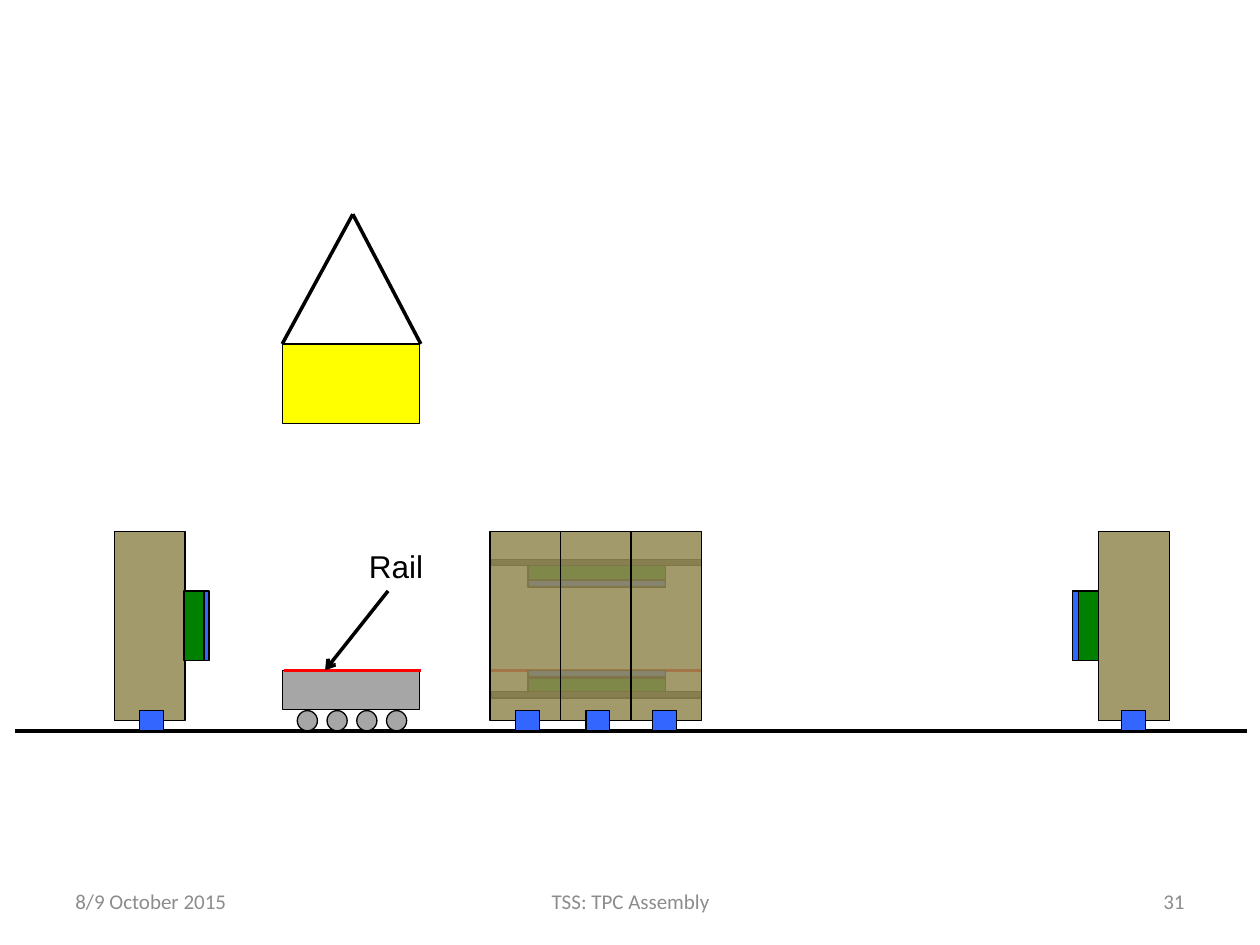
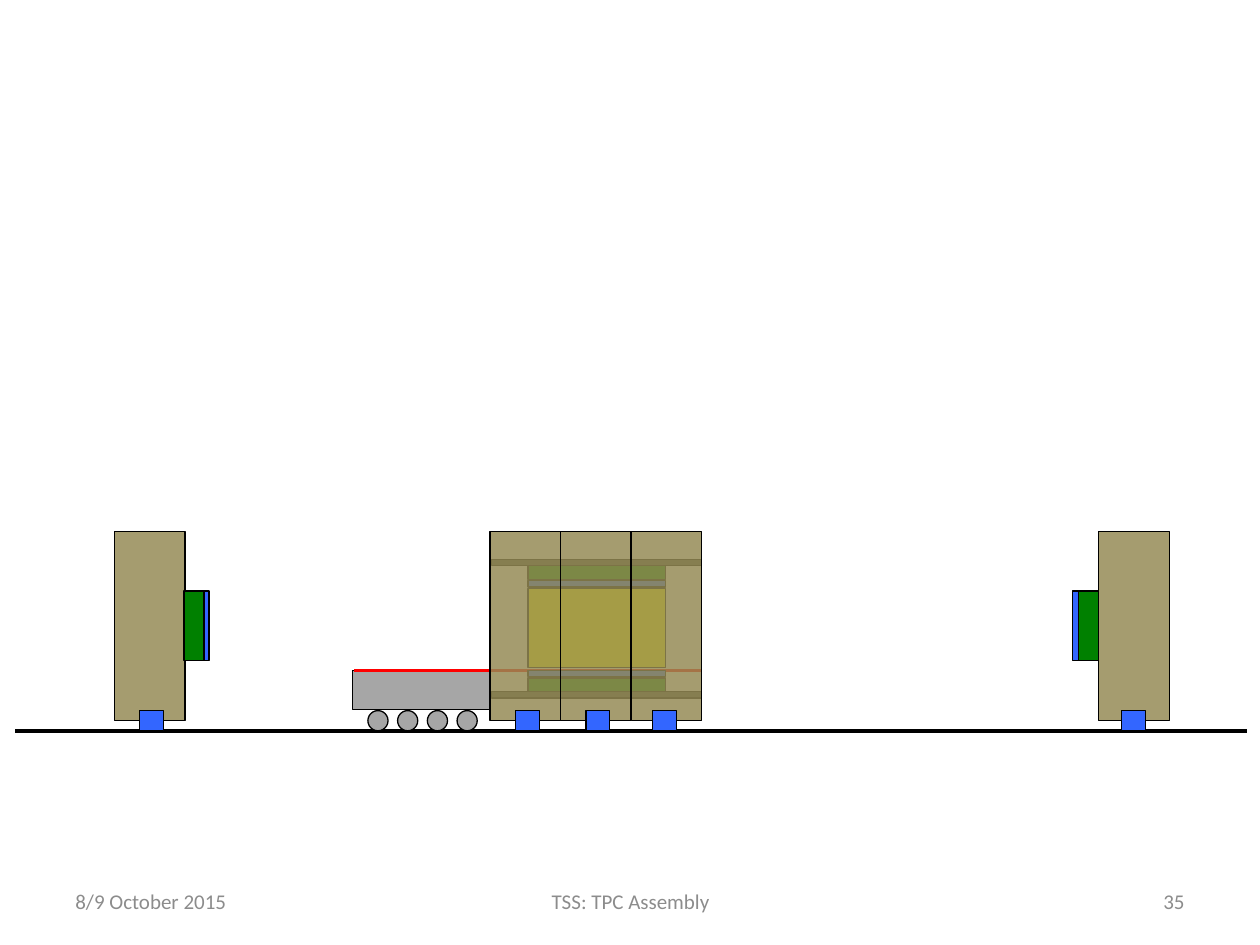
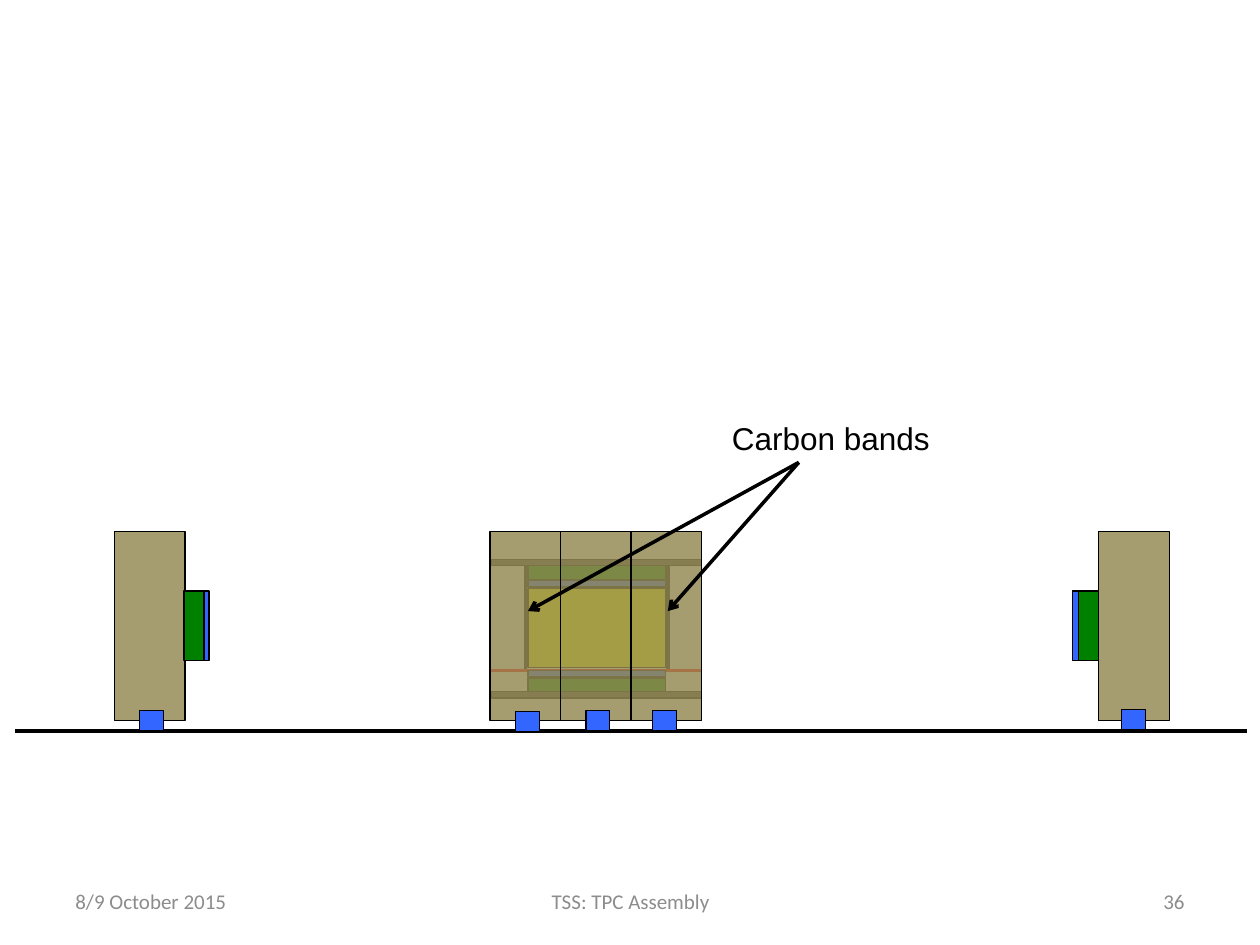
from lxml.etree import SubElement
from pptx import Presentation
from pptx.dml.color import RGBColor
from pptx.enum.shapes import MSO_CONNECTOR, MSO_SHAPE
from pptx.enum.text import MSO_ANCHOR, MSO_AUTO_SIZE, PP_ALIGN
from pptx.oxml.ns import qn
from pptx.util import Inches, Pt

COLORS = {
    "black": "000000",
    "rail": "FF0000",
    "panel": "3366FF",
    "detector": "008000",
    "beam": "404040",
    "yoke": "948A54",
    "volume": "FFFF00",
    "cart": "A6A6A6",
    "footer": "8C8C8C",
}

# Heights and sizes shared by all steps
FLOOR = 5.8
RAIL_TOP = 5.32
YOKE_TOP, YOKE_WIDTH, YOKE_HEIGHT = 4.22, 0.56, 1.5
YOKE_LEFT = 3.89
VOLUME_WIDTH, VOLUME_HEIGHT = 1.09, 0.63
INNER_LEFT = 4.19
FOOT_TOP = 5.64
FOOT_LEFTS = [1.11, 4.09, 4.65, 5.18, 8.9]

# What changes from step to step; arrows are (start x, start y, end x, end y)
STEPS = [
    {"number": "31", "opacity": 86, "volume": (2.24, 2.73), "hoisted": True,
     "cart": 2.24, "bands": [], "label": ("Rail", 2.83, 4.29, 0.64),
     "arrows": [(3.08, 4.69, 2.58, 5.32)], "foot_shifts": {}},
    {"number": "35", "opacity": 84, "volume": (INNER_LEFT, 4.67), "hoisted": False,
     "cart": 2.8, "bands": [], "label": None, "arrows": [], "foot_shifts": {}},
    {"number": "36", "opacity": 84, "volume": (INNER_LEFT, 4.67), "hoisted": False,
     "cart": None, "bands": [4.17, 5.3], "label": ("Carbon bands", 5.71, 3.28, 1.79),
     "arrows": [(6.34, 3.67, 5.3, 4.85), (6.34, 3.67, 4.19, 4.85)],
     "foot_shifts": {4.09: 0.01, 8.9: -0.01}},
]


def add_block(page, left, top, width, height, color, opacity=100, kind=MSO_SHAPE.RECTANGLE):
    block = page.shapes.add_shape(kind, Inches(left), Inches(top), Inches(width), Inches(height))
    block.shadow.inherit = False
    block.fill.solid()
    block.fill.fore_color.rgb = RGBColor.from_string(COLORS[color])
    block.line.color.rgb = RGBColor.from_string(COLORS["black"])
    block.line.width = Pt(0.75)
    if opacity < 100:
        fill_color = block.fill._xPr.find(qn("a:solidFill"))[0]
        SubElement(fill_color, qn("a:alpha")).set("val", str(opacity * 1000))


def add_line(page, start_x, start_y, end_x, end_y, color="black", arrow=False):
    line = page.shapes.add_connector(
        MSO_CONNECTOR.STRAIGHT, Inches(start_x), Inches(start_y), Inches(end_x), Inches(end_y))
    line.line.color.rgb = RGBColor.from_string(COLORS[color])
    line.line.width = Pt(2)
    if arrow:
        SubElement(line.line._get_or_add_ln(), qn("a:tailEnd")).set("type", "arrow")
    SubElement(line._element.spPr, qn("a:effectLst"))


deck = Presentation()
deck.slide_width, deck.slide_height = Inches(10), Inches(7.5)

for step in STEPS:
    page = deck.slides.add_slide(deck.slide_layouts[6])

    # Carbon bands and floor
    for band_x in step["bands"]:
        add_line(page, band_x, 4.49, band_x, RAIL_TOP)
    add_line(page, 0.12, FLOOR, 9.9, FLOOR)

    # Inside of the magnet: rail, lower and upper layers
    add_line(page, 3.9, RAIL_TOP, 5.56, RAIL_TOP, "rail")
    for panel_top, detector_top, beam_top in [(5.32, 5.38, 5.49), (4.61, 4.49, 4.44)]:
        add_block(page, INNER_LEFT, panel_top, VOLUME_WIDTH, 0.05, "panel")
        add_block(page, INNER_LEFT, detector_top, VOLUME_WIDTH, 0.11, "detector")
        add_block(page, 3.9, beam_top, 1.67, 0.05, "beam")

    # Volume, with its hoist while it hangs
    volume_left, volume_top = step["volume"]
    add_block(page, volume_left, volume_top, VOLUME_WIDTH, VOLUME_HEIGHT, "volume")
    if step["hoisted"]:
        for rope_x in [volume_left, volume_left + 1.1]:
            add_line(page, rope_x, volume_top, 2.8, 1.7)

    # Cart with wheels and rail
    cart_left = step["cart"]
    if cart_left is not None:
        add_block(page, cart_left, RAIL_TOP, VOLUME_WIDTH, 0.31, "cart")
        for wheel in range(4):
            wheel_left = cart_left + 0.12 + wheel * 0.236
            add_block(page, wheel_left, FOOT_TOP, 0.16, 0.16, "cart", kind=MSO_SHAPE.OVAL)
        add_line(page, cart_left + 0.01, RAIL_TOP, cart_left + 1.1, RAIL_TOP, "rail")

    # Three yoke rings
    for ring in range(3):
        add_block(page, YOKE_LEFT + ring * YOKE_WIDTH, YOKE_TOP, YOKE_WIDTH, YOKE_HEIGHT,
                  "yoke", step["opacity"])

    # End caps on both sides
    for cap_left, panel_left, detector_left in [(0.91, 1.61, 1.46), (8.72, 8.51, 8.56)]:
        add_block(page, cap_left, YOKE_TOP, YOKE_WIDTH, YOKE_HEIGHT, "yoke", step["opacity"])
        add_block(page, panel_left, 4.69, 0.05, 0.55, "panel")
        add_block(page, detector_left, 4.69, 0.16, 0.55, "detector")

    # Feet
    for foot_left in FOOT_LEFTS:
        foot_top = FOOT_TOP + step["foot_shifts"].get(foot_left, 0)
        add_block(page, foot_left, foot_top, 0.19, 0.16, "panel")

    # Arrows
    for arrow in step["arrows"]:
        add_line(page, *arrow, arrow=True)

    # Label and footer
    texts = [
        ("8/9 October 2015", 0.5, 6.95, 2.33, PP_ALIGN.LEFT),
        ("TSS: TPC Assembly", 3.42, 6.95, 3.17, PP_ALIGN.CENTER),
        (step["number"], 7.17, 6.95, 2.33, PP_ALIGN.RIGHT),
    ]
    if step["label"]:
        texts.insert(0, (*step["label"], None))
    for text, left, top, width, alignment in texts:
        is_label = alignment is None
        box = page.shapes.add_textbox(Inches(left), Inches(top), Inches(width), Inches(0.4))
        frame = box.text_frame
        frame.text = text
        frame.word_wrap = not is_label
        frame.auto_size = MSO_AUTO_SIZE.SHAPE_TO_FIT_TEXT if is_label else MSO_AUTO_SIZE.NONE
        frame.vertical_anchor = MSO_ANCHOR.TOP if is_label else MSO_ANCHOR.MIDDLE
        paragraph = frame.paragraphs[0]
        paragraph.alignment = alignment
        span = paragraph.runs[0]
        span.font.name = "Arial" if is_label else "Calibri"
        span.font.size = Pt(18 if is_label else 12)
        span.font.color.rgb = RGBColor.from_string(COLORS["black" if is_label else "footer"])

deck.save("out.pptx")
